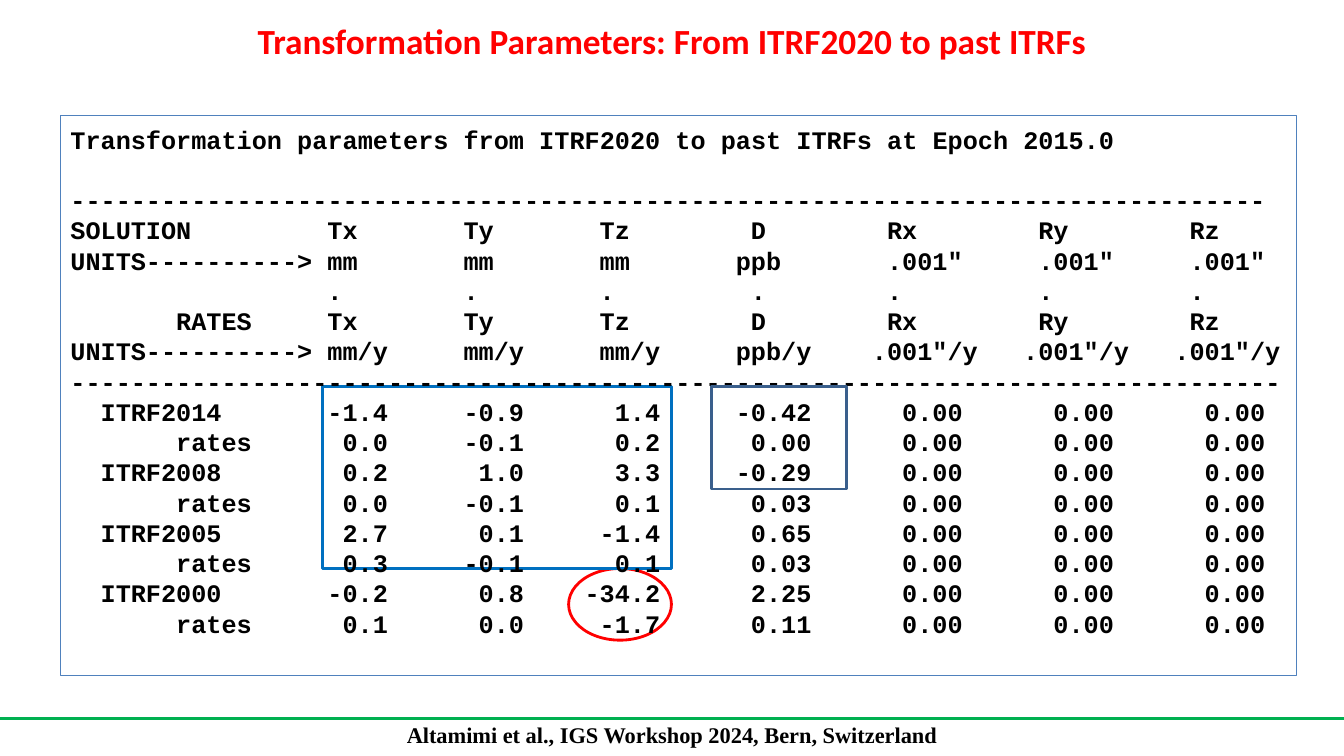
from dataclasses import dataclass

import pptx
import pptx.dml.color
import pptx.enum.shapes
import pptx.enum.text
import pptx.oxml.ns
import pptx.util
from lxml import etree

Inches, Pt = pptx.util.Inches, pptx.util.Pt
MSO_SHAPE = pptx.enum.shapes.MSO_SHAPE
ALIGN = pptx.enum.text.PP_ALIGN
ANCHOR = pptx.enum.text.MSO_ANCHOR


@dataclass(frozen=True)
class Theme:
    red: str = "FF0000"
    green: str = "00B050"
    blue: str = "0070C0"
    navy: str = "3A5F8C"
    frame: str = "4F81BD"
    ink: str = "000000"
    paper: str = "FFFFFF"
    title_size: float = 25.2
    listing_size: float = 18
    footer_size: float = 16
    line_pitch: float = 21.6


THEME = Theme()
WIDTH, HEIGHT = 13.33, 7.5
COLUMN = 0.6 * THEME.listing_size / 72
ROW = THEME.line_pitch / 72
INSET = 0.1

HEADER_STOPS = [17, 26, 35, 45, 54, 64, 74]
UNIT_STOPS = [17, 26, 35, 44, 54, 64, 74]
RATE_UNIT_STOPS = [17, 26, 35, 44, 53, 63, 73]
VALUE_STOPS = [21, 30, 39, 49, 59, 69, 79]
AXES = "Tx Ty Tz D Rx Ry Rz"
ARROW = "UNITS---------->"
ZEROS = " 0.00 0.00 0.00"
HEADINGS = [
    ("SOLUTION", 0, AXES, HEADER_STOPS),
    (ARROW, 0, 'mm mm mm ppb .001" .001" .001"', UNIT_STOPS),
    ("", 0, ". . . . . . .", HEADER_STOPS),
    ("RATES", 7, AXES, HEADER_STOPS),
    (ARROW, 0, 'mm/y mm/y mm/y ppb/y .001"/y .001"/y .001"/y', RATE_UNIT_STOPS),
]
SOLUTIONS = [
    ("ITRF2014", "-1.4 -0.9 1.4 -0.42", "0.0 -0.1 0.2 0.00"),
    ("ITRF2008", "0.2 1.0 3.3 -0.29", "0.0 -0.1 0.1 0.03"),
    ("ITRF2005", "2.7 0.1 -1.4 0.65", "0.3 -0.1 0.1 0.03"),
    ("ITRF2000", "-0.2 0.8 -34.2 2.25", "0.1 0.0 -1.7 0.11"),
]


def rgb(value):
    return pptx.dml.color.RGBColor.from_string(value)


def apply(target, values):
    for key, value in values.items():
        setattr(target, key, value)


def write(paragraph, text, face, size, color):
    run = paragraph.add_run()
    run.text = text
    apply(run.font, {"name": face, "size": Pt(size), "bold": True})
    run.font.color.rgb = rgb(color)


def prepare_frame(frame, anchor, **margins):
    settings = {"word_wrap": True, "vertical_anchor": anchor}
    for side in ("left", "top", "right", "bottom"):
        settings["margin_" + side] = Inches(margins.get(side, 0))
    apply(frame, settings)


def add_outline(slide, kind, box, color, weight, fill=None):
    outline = slide.shapes.add_shape(kind, *map(Inches, box))
    outline.shadow.inherit = False
    if fill:
        outline.fill.solid()
        outline.fill.fore_color.rgb = rgb(fill)
    else:
        outline.fill.background()
    outline.line.color.rgb = rgb(color)
    outline.line.width = Pt(weight)
    return outline


def add_highlight(slide, kind, panel, cells, color, fill=None):
    column, row, columns, rows = cells
    left, top = panel[0] + INSET, panel[1] + INSET / 2
    box = (left + column * COLUMN, top + row * ROW, columns * COLUMN, rows * ROW)
    add_outline(slide, kind, box, color, 2, fill)


def set_stops(paragraph, stops):
    tag = pptx.oxml.ns.qn
    tabs = etree.SubElement(paragraph._p.get_or_add_pPr(), tag("a:tabLst"))
    for column, side in stops:
        etree.SubElement(tabs, tag("a:tab"), pos=str(Inches(column * COLUMN)), algn=side)


def listing_lines():
    yield "Transformation parameters from ITRF2020 to past ITRFs at Epoch 2015.0", []
    yield "-" * 79, []
    for label, indent, cells, columns in HEADINGS:
        yield row_line(label, indent, cells, columns, "l")
    yield "-" * 80, []
    for name, values, rates in SOLUTIONS:
        yield row_line(name, 2, values + ZEROS, VALUE_STOPS, "r")
        yield row_line("rates", 7, rates + ZEROS, VALUE_STOPS, "r")


def row_line(label, indent, cells, columns, side):
    stops = [(column, side) for column in columns]
    lead = ""
    if indent:
        lead = "\t"
        stops.insert(0, (indent, "l"))
    return lead + "\t".join([label, *cells.split()]), stops


def add_title(slide, box):
    title = slide.shapes.title
    apply(title, dict(zip(("left", "top", "width", "height"), map(Inches, box))))
    prepare_frame(title.text_frame, ANCHOR.MIDDLE)
    heading = title.text_frame.paragraphs[0]
    heading.alignment = ALIGN.CENTER
    write(heading, "Transformation Parameters: From ITRF2020 to past ITRFs",
          "Calibri", THEME.title_size, THEME.red)


def add_listing(slide, box):
    panel = add_outline(slide, MSO_SHAPE.RECTANGLE, box, THEME.frame, 0.75)
    frame = panel.text_frame
    prepare_frame(frame, ANCHOR.TOP, left=INSET, top=0.08)
    for index, (text, stops) in enumerate(listing_lines()):
        line = frame.add_paragraph() if index else frame.paragraphs[0]
        if stops:
            set_stops(line, stops)
        apply(line, {"alignment": ALIGN.LEFT, "line_spacing": Pt(THEME.line_pitch)})
        if index == 1:
            line.space_before = Pt(THEME.line_pitch)
        write(line, text, "Courier New", THEME.listing_size, THEME.ink)


def add_parameters(slide, box):
    add_highlight(slide, MSO_SHAPE.OVAL, box, (32.93, 14.8, 6.8, 2.37),
                  THEME.red, THEME.paper)
    add_highlight(slide, MSO_SHAPE.RECTANGLE, box, (16.67, 8.77, 23.07, 6.03),
                  THEME.blue, THEME.paper)
    add_listing(slide, box)
    add_highlight(slide, MSO_SHAPE.RECTANGLE, box, (42.4, 8.77, 8.93, 3.4), THEME.navy)


def add_footer(slide, box):
    left, top, width, height = box
    rule = slide.shapes.add_connector(
        pptx.enum.shapes.MSO_CONNECTOR.STRAIGHT,
        *map(Inches, (left, top, left + width, top)))
    rule.line.color.rgb = rgb(THEME.green)
    rule.line.width = Pt(2.25)
    etree.SubElement(rule._element.spPr, pptx.oxml.ns.qn("a:effectLst"))
    margin = 0.035 * width
    credit = slide.shapes.add_textbox(
        *map(Inches, (left + margin, top + 0.01, width - 2 * margin, height)))
    prepare_frame(credit.text_frame, ANCHOR.MIDDLE)
    source = credit.text_frame.paragraphs[0]
    source.alignment = ALIGN.CENTER
    write(source, "Altamimi et al., IGS Workshop 2024, Bern, Switzerland",
          "Times New Roman", THEME.footer_size, THEME.ink)


def main():
    deck = pptx.Presentation()
    apply(deck, {"slide_width": Inches(WIDTH), "slide_height": Inches(HEIGHT)})
    slide = deck.slides.add_slide(deck.slide_layouts[5])
    add_footer(slide, (0, 0.95 * HEIGHT, WIDTH, 0.31))
    add_title(slide, (0.05 * WIDTH, 0.13, 0.9 * WIDTH, 0.55))
    add_parameters(slide, (0.6, 1.15, 0.92 * WIDTH, 0.74 * HEIGHT))
    deck.save("out.pptx")


if __name__ == "__main__":
    main()
